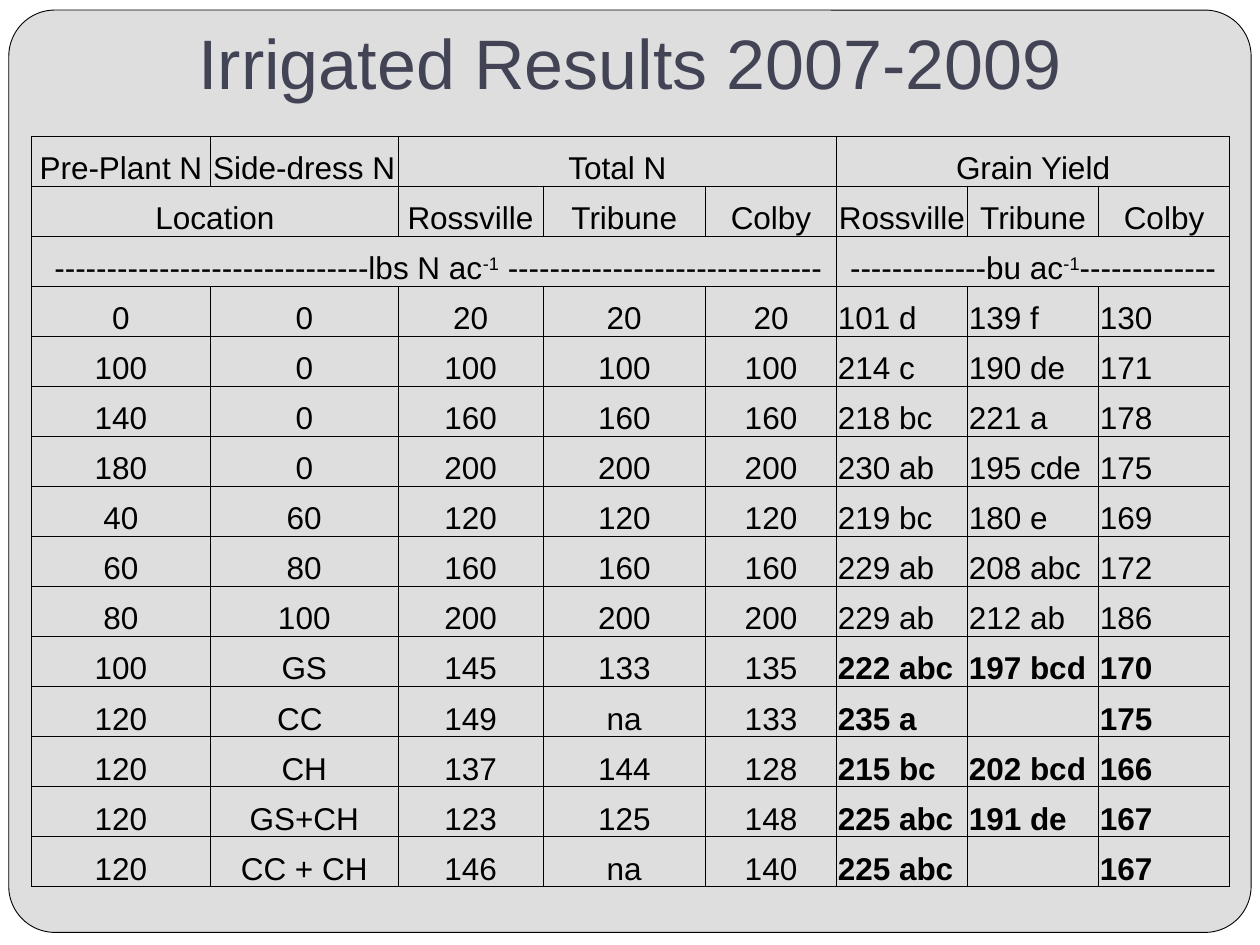
from dataclasses import dataclass

from lxml import etree
from pptx import Presentation
from pptx import util as u
from pptx.dml.color import RGBColor
from pptx.enum import shapes, text
from pptx.oxml.ns import qn


@dataclass(frozen=True)
class Theme:
    font: str = "Arial"
    panel: str = "DEDEDE"
    page: str = "FFFFFF"
    ink: str = "000000"
    head: str = "424456"
    title: int = 40
    body: int = 18
    rule: float = 0.5


T = Theme()
W, H = 10, 7.5
MID, LEFT = text.PP_ALIGN.CENTER, text.PP_ALIGN.LEFT
LOW = text.MSO_ANCHOR.BOTTOM

COLS = [1.42, 1.49, 1.15, 1.29] + [1.04] * 4
TALL = 5.96  # table height, shared equally by the rows
YIELD = 5  # first grain yield column
HEADS = 3  # header rows
BOLD = 10  # first row with bold yields

# "<" joins a cell to the one on its left; "^" encloses a superscript
ROWS = [row.split("|") for row in (
    "Pre-Plant N|Side-dress N|Total N|<|<|Grain Yield|<|<",
    "Location|<|Rossville|Tribune|Colby|Rossville|Tribune|Colby",
    f" {'-' * 30}lbs N ac^-1^ {'-' * 30}|<|<|<|<|{'-' * 13}bu ac^-1^{'-' * 13}|<|<",
    "0|0|20|20|20|101 d|139 f|130",
    "100|0|100|100|100|214 c|190 de|171",
    "140|0|160|160|160|218 bc|221 a|178",
    "180|0|200|200|200|230 ab|195 cde|175",
    "40|60|120|120|120|219 bc|180 e|169",
    "60|80|160|160|160|229 ab|208 abc|172",
    "80|100|200|200|200|229 ab|212 ab|186",
    "100|GS|145|133|135|222 abc|197 bcd|170",
    "120|CC |149|na|133|235 a||175",
    "120|CH|137|144|128|215 bc|202 bcd|166",
    "120|GS+CH|123|125|148|225 abc|191 de|167",
    "120|CC + CH|146|na|140|225 abc||167",
)]


def put(obj, **vals):
    for key, val in vals.items():
        setattr(obj, key, val)


def pads(obj, left, top, right, low):
    put(obj, margin_left=u.Inches(left), margin_top=u.Inches(top),
        margin_right=u.Inches(right), margin_bottom=u.Inches(low))


def write(para, words, size, color, align, bold=False):
    para.alignment = align
    for i, part in enumerate(words.split("^")):
        if not part:
            continue
        run = para.add_run()
        run.text = part
        put(run.font, name=T.font, size=u.Pt(size), bold=bold)
        run.font.color.rgb = RGBColor.from_string(color)
        if i % 2:
            run.font._element.set("baseline", "30000")


def panel(slide):
    box = slide.shapes.add_shape(
        shapes.MSO_SHAPE.ROUNDED_RECTANGLE,
        *map(u.Inches, (0.07, 0.08, 9.86, 7.32)))
    box.adjustments[0] = 0.05
    box.shadow.inherit = False
    box.fill.solid()
    box.fill.fore_color.rgb = RGBColor.from_string(T.panel)
    box.line.color.rgb = RGBColor.from_string(T.ink)
    box.line.width = u.Pt(T.rule)


def title(slide, words):
    box = slide.shapes.add_textbox(0, u.Inches(0.25), u.Inches(W), u.Inches(0.67))
    frame = box.text_frame
    put(frame, word_wrap=True, vertical_anchor=LOW)
    pads(frame, 0.1, 0.05, 0.1, 0.1)
    write(frame.paragraphs[0], words, T.title, T.head, MID)


def edge(cell):
    props = cell._tc.get_or_add_tcPr()
    for side in ("lnL", "lnR", "lnT", "lnB"):
        line = etree.SubElement(props, qn("a:" + side), w=str(u.Pt(T.rule)))
        fill = etree.SubElement(line, qn("a:solidFill"))
        etree.SubElement(fill, qn("a:srgbClr"), val=T.ink)


def grid(slide):
    size = (0.25, 1.08, sum(COLS), TALL)
    table = slide.shapes.add_table(
        len(ROWS), len(COLS), *map(u.Inches, size)).table
    put(table, first_row=False, horz_banding=False)
    for col, wide in zip(table.columns, COLS):
        col.width = u.Inches(wide)
    for r, row in enumerate(ROWS):
        table.rows[r].height = u.Inches(TALL / len(ROWS))
        for c, words in enumerate(row):
            cell = table.cell(r, c)
            edge(cell)
            cell.fill.background()
            cell.vertical_anchor = LOW
            pads(cell, 0.01, 0.01, 0.01, 0)
            if words == "<":
                continue
            # Join the cells that follow
            end = c + 1
            while end < len(row) and row[end] == "<":
                end += 1
            if end > c + 1:
                cell.merge(table.cell(r, end - 1))
            data = r >= HEADS and c >= YIELD
            write(cell.text_frame.paragraphs[0], words, T.body, T.ink,
                  LEFT if data else MID, data and r >= BOLD)


def main():
    deck = Presentation()
    put(deck, slide_width=u.Inches(W), slide_height=u.Inches(H))
    slide = deck.slides.add_slide(deck.slide_layouts[6])
    # Backdrop
    slide.background.fill.solid()
    slide.background.fill.fore_color.rgb = RGBColor.from_string(T.page)
    panel(slide)
    # Content
    title(slide, "Irrigated Results 2007-2009")
    grid(slide)
    deck.save("out.pptx")


if __name__ == "__main__":
    main()
